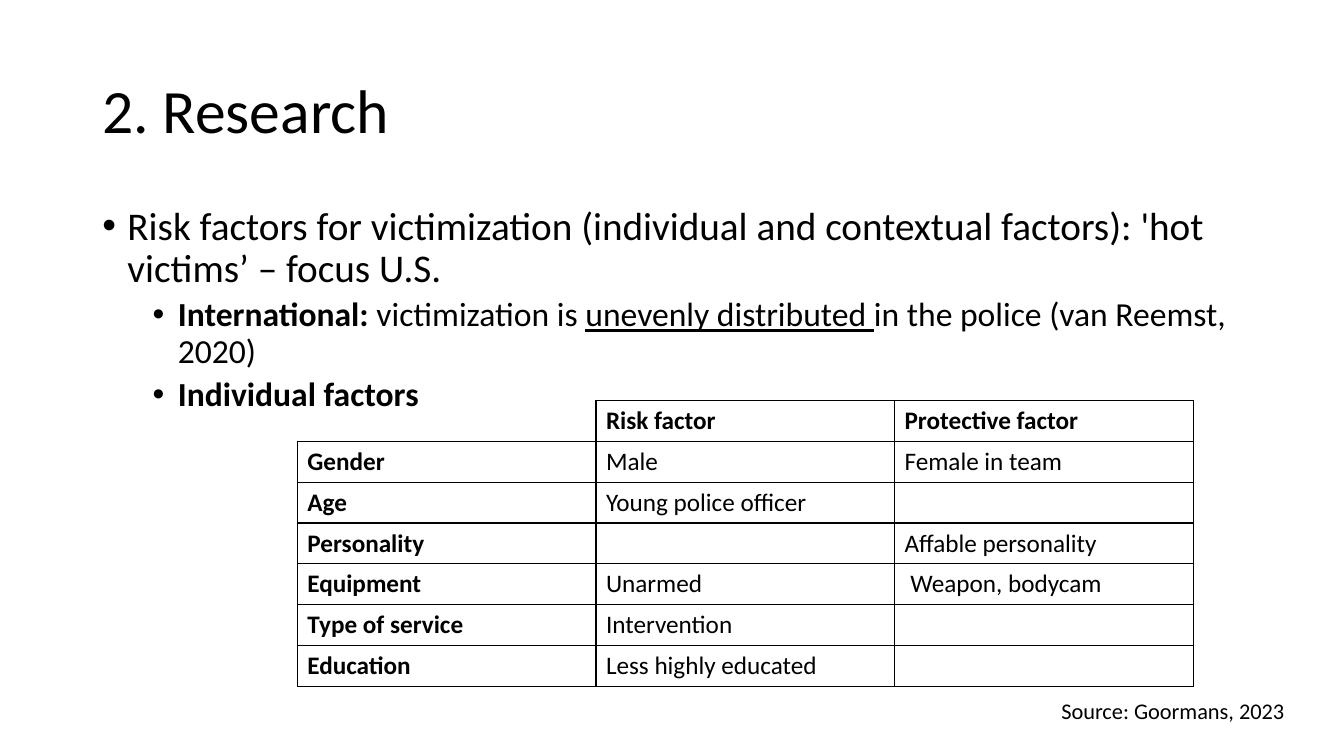
from lxml.etree import SubElement
from pptx import Presentation
from pptx.dml.color import RGBColor
from pptx.enum.text import MSO_ANCHOR
from pptx.oxml.ns import qn
from pptx.util import Pt

BULLETS = [
    (0, [("Risk factors for victimization (individual and contextual factors): "
          "'hot victims’ – focus U.S.", "")]),
    (1, [("International:", "b"), (" victimization is ", ""),
         ("unevenly distributed ", "u"), ("in the police (van Reemst, 2020)", "")]),
    (1, [("Individual factors", "b")]),
]
FACTORS = [
    ("", "Risk factor", "Protective factor"),
    ("Gender", "Male", "Female in team"),
    ("Age", "Young police officer", ""),
    ("Personality", "", "Affable personality"),
    ("Equipment", "Unarmed", " Weapon, bodycam"),
    ("Type of service", "Intervention", ""),
    ("Education", "Less highly educated", ""),
]


def rgb(value):
    return RGBColor.from_string(value)


class Deck:
    """Holds the style and the current slide, with a method per element."""

    font = "Calibri"
    ink = "000000"

    def __init__(self, prs):
        self.slide = prs.slides.add_slide(prs.slide_layouts[6])

    def style(self, r, size, bold=False, underline=False):
        r.font.name = self.font
        r.font.size = Pt(size)
        r.font.bold = bold
        r.font.underline = underline
        r.font.color.rgb = rgb(self.ink)

    def box(self, x, y, w, h, anchor=MSO_ANCHOR.TOP):
        tf = self.slide.shapes.add_textbox(Pt(x), Pt(y), Pt(w), Pt(h)).text_frame
        tf.word_wrap = True
        tf.vertical_anchor = anchor
        return tf

    def text(self, x, y, w, h, text, size, anchor=MSO_ANCHOR.TOP, spacing=1.0):
        tf = self.box(x, y, w, h, anchor)
        tf.text = text
        p = tf.paragraphs[0]
        p.line_spacing = spacing
        self.style(p.runs[0], size)

    def bullets(self, x, y, w, h, items):
        tf = self.box(x, y, w, h)
        for i, (level, runs) in enumerate(items):
            p = tf.add_paragraph() if i else tf.paragraphs[0]
            p.level = level
            p.line_spacing = 0.9
            p.space_before = Pt(5 if level else 10)
            for text, flags in runs:
                r = p.add_run()
                r.text = text
                self.style(r, 24 if level else 28, "b" in flags, "u" in flags)
            pPr = p._p.get_or_add_pPr()
            pPr.set("marL", str(Pt(18 + 36 * level)))
            pPr.set("indent", str(Pt(-18)))
            SubElement(pPr, qn("a:buFont"), typeface="Arial")
            SubElement(pPr, qn("a:buChar"), char="•")

    def borders(self, cell, sides):
        tcPr = cell._tc.get_or_add_tcPr()
        for side in "LRTB":
            ln = SubElement(tcPr, qn("a:ln" + side), w=str(Pt(1)))
            if side in sides:
                fill = SubElement(ln, qn("a:solidFill"))
                SubElement(fill, qn("a:srgbClr"), val=self.ink)
            else:
                SubElement(ln, qn("a:noFill"))

    def table(self, x, y, col_w, row_h, rows):
        n, m = len(rows), len(rows[0])
        table = self.slide.shapes.add_table(
            n, m, Pt(x), Pt(y), Pt(col_w * m), Pt(row_h * n)).table
        table.first_row = table.horz_banding = False
        for col in table.columns:
            col.width = Pt(col_w)
        for i, row in enumerate(rows):
            table.rows[i].height = Pt(row_h)
            for j, text in enumerate(row):
                cell = table.cell(i, j)
                cell.text = text
                for r in cell.text_frame.paragraphs[0].runs:
                    self.style(r, 18, bold=i == 0 or j == 0)
                self.borders(cell, "LRTB" if i or j else "RB")
                cell.fill.background()


def main():
    prs = Presentation()
    prs.slide_width, prs.slide_height = Pt(960), Pt(540)
    deck = Deck(prs)
    deck.text(66, 28.75, 828, 104.4, "2. Research", 44, MSO_ANCHOR.MIDDLE, 0.9)
    deck.bullets(66, 143.75, 828, 342.6, BULLETS)
    deck.text(751, 494.6, 205, 26.6, "Source: Goormans, 2023", 16)
    deck.table(212.4, 286, 213.3, 29.2, FACTORS)
    prs.save("out.pptx")


if __name__ == "__main__":
    main()
